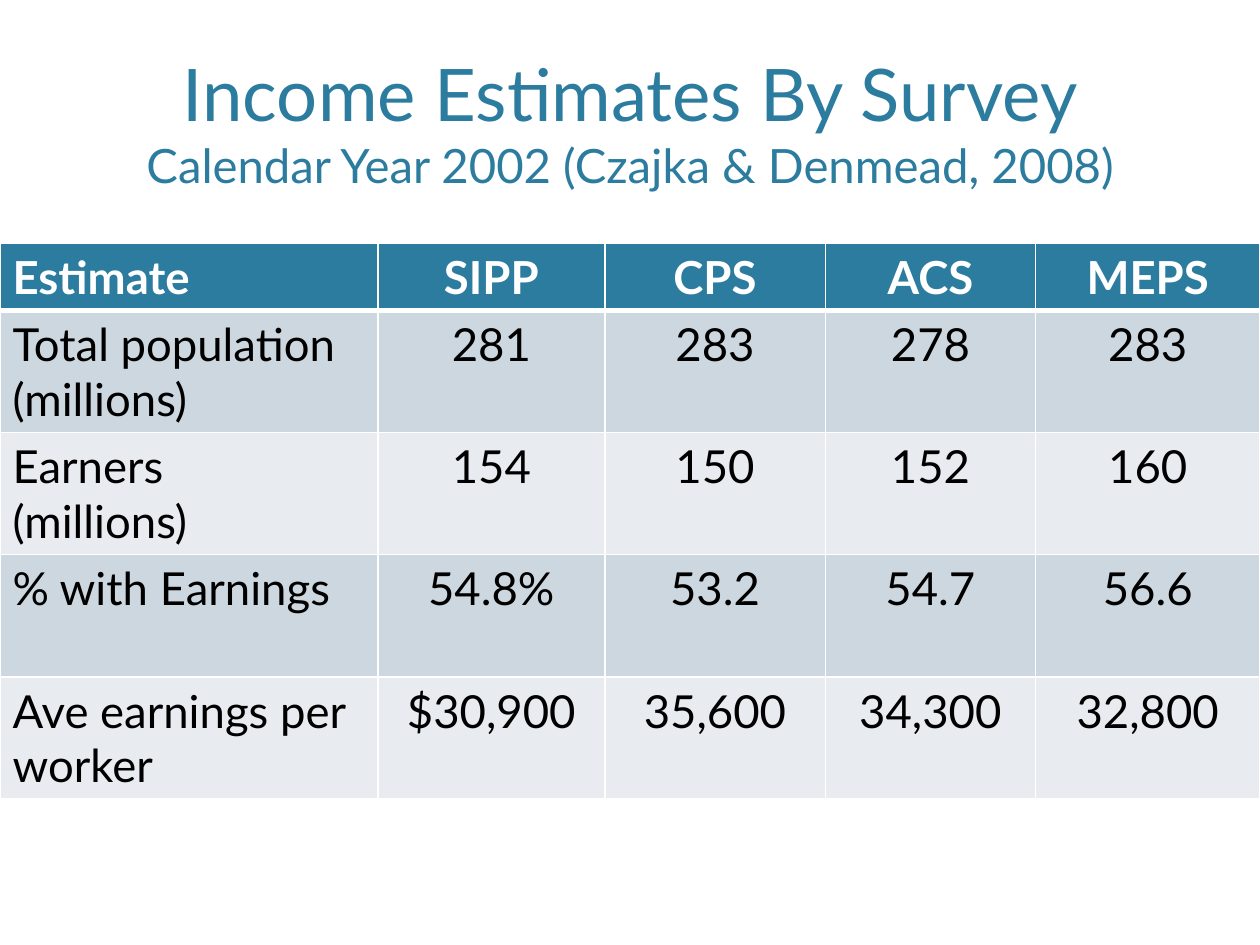
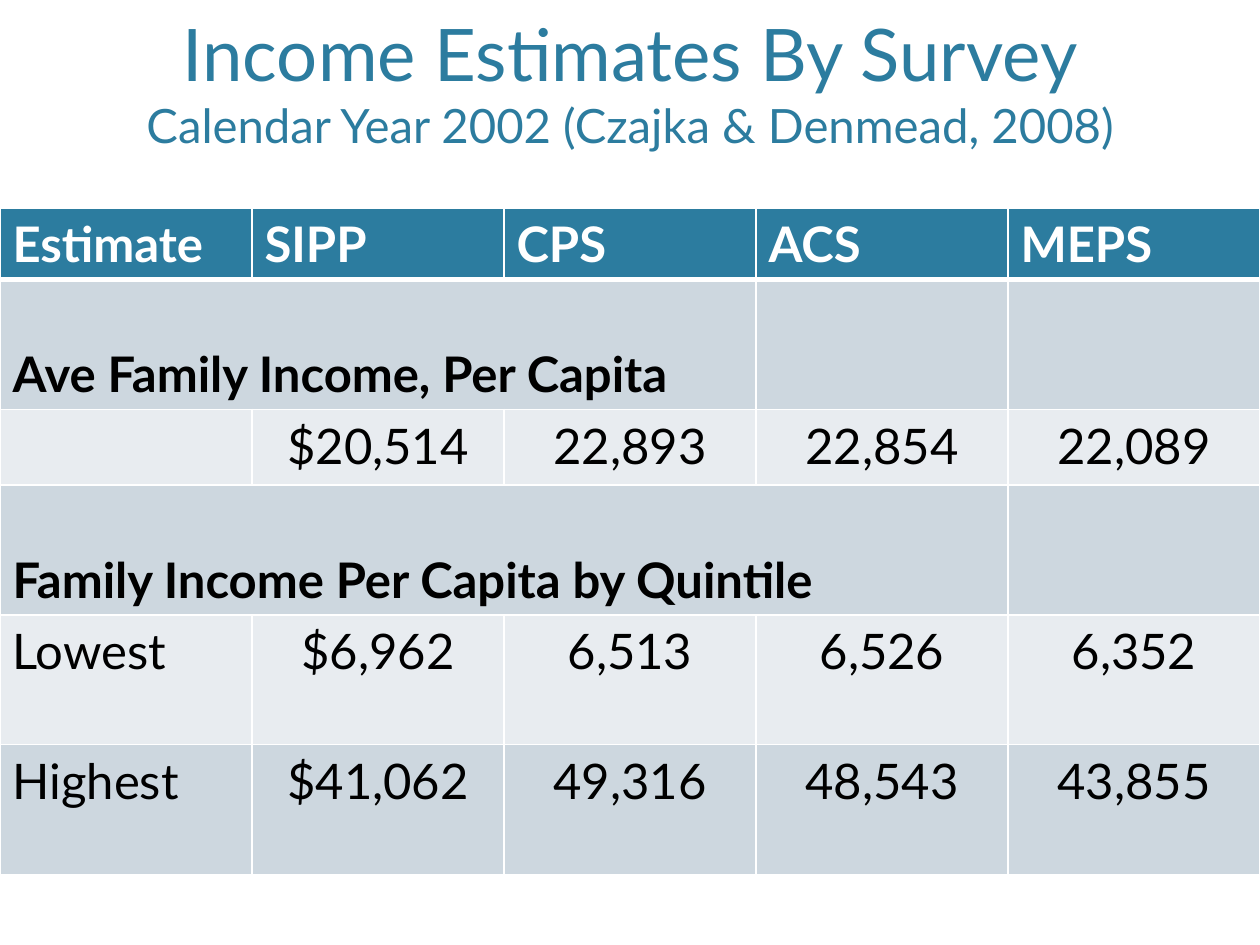
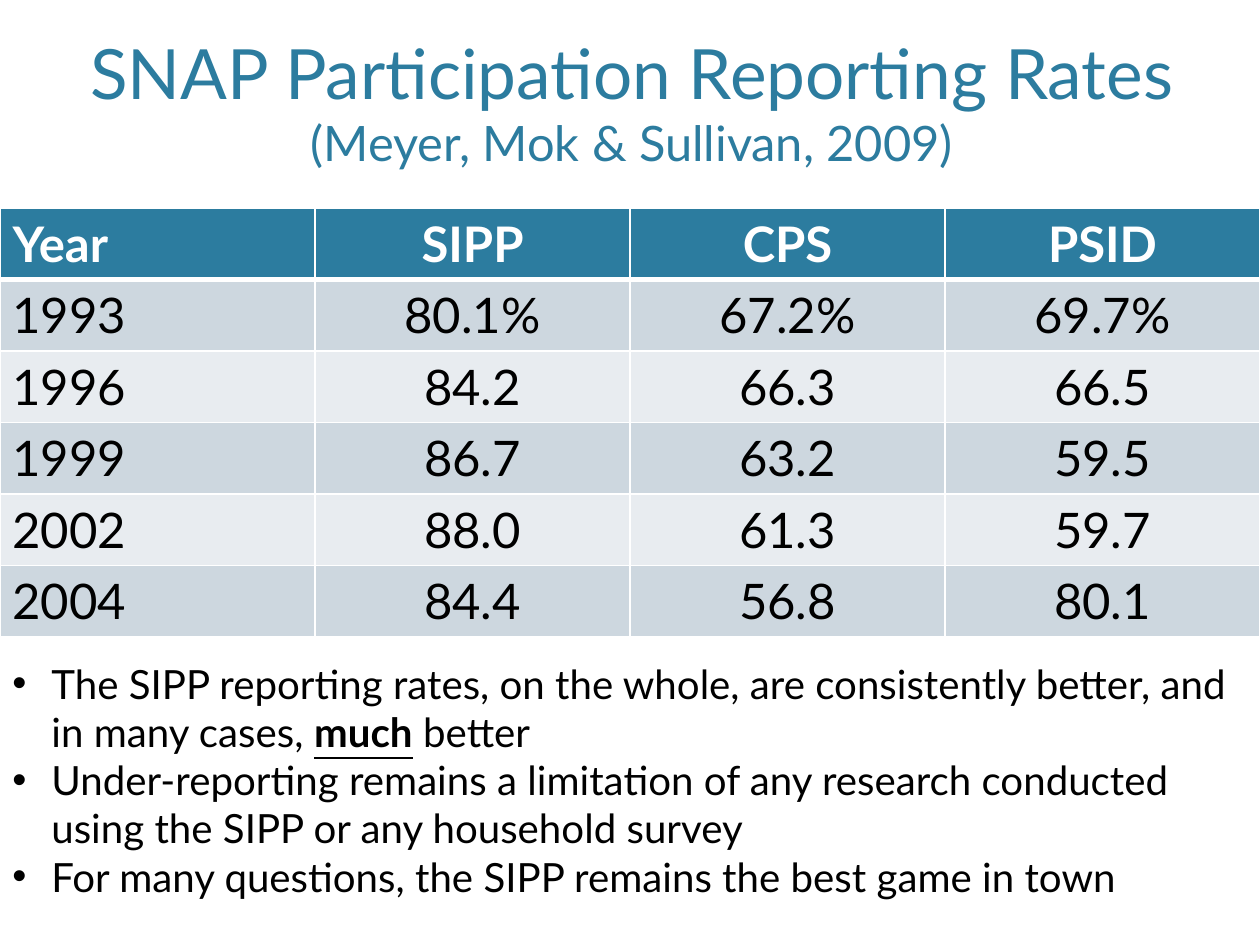
from lxml import etree
from pptx import Presentation
from pptx.dml.color import RGBColor
from pptx.enum import text
from pptx.oxml.ns import qn
from pptx.util import Inches, Pt

W, H = 10, 7.5
FONT = "Lato"
COLORS = {"teal": "2C7C9F", "white": "FFFFFF", "black": "000000",
          "dark_band": "CDD7DF", "light_band": "E8ECF0"}
LEFT, CENTER = text.PP_ALIGN.LEFT, text.PP_ALIGN.CENTER
TOP, BOTTOM = text.MSO_ANCHOR.TOP, text.MSO_ANCHOR.BOTTOM

INCOME_TITLE = [("Income Estimates By Survey", 41.4),
                ("Calendar Year 2002 (Czajka & Denmead, 2008)", 27)]
SURVEYS = ["SIPP", "CPS", "ACS", "MEPS"]

SLIDES = [
    {
        "title": INCOME_TITLE,
        "title_box": (0.6, 0.12, 8.8, 1.46),
        "table": {
            "top": 1.93, "size": 26, "header_align": CENTER,
            "cols": [3, 1.8, 1.75, 1.67, 1.78],
            "heights": [0.52] + [0.97] * 4,
            "rows": [
                ["Estimate", *SURVEYS],
                ["Total population\n(millions)", "281", "283", "278", "283"],
                ["Earners\n(millions)", "154", "150", "152", "160"],
                ["% with Earnings", "54.8%", "53.2", "54.7", "56.6"],
                ["Ave earnings per worker", "$30,900", "35,600", "34,300", "32,800"],
            ],
        },
    },
    {
        "title": INCOME_TITLE,
        "title_box": (0.6, 0.12, 8.8, 1.14),
        "table": {
            "top": 1.65, "size": 28, "header_align": LEFT,
            "cols": [W / 5] * 5,
            "heights": [0.57, 1.03, 0.6, 1.03, 1.03, 1.03],
            "spans": {1: 3, 3: 4},
            "rows": [
                ["Estimate", *SURVEYS],
                ["Ave Family Income, Per Capita", "", "", "", ""],
                ["", "$20,514", "22,893", "22,854", "22,089"],
                ["Family Income Per Capita by Quintile", "", "", "", ""],
                ["Lowest", "$6,962", "6,513", "6,526", "6,352"],
                ["Highest", "$41,062", "49,316", "48,543", "43,855"],
            ],
        },
    },
    {
        "title": [("SNAP Participation Reporting Rates", 39.6),
                  ("(Meyer, Mok & Sullivan, 2009)", 27.9)],
        "title_box": (0.19, 0.12, 9.65, 1.29),
        "table": {
            "top": 1.65, "size": 28, "header_align": CENTER,
            "cols": [W / 4] * 4,
            "heights": [3.4 / 6] * 6,
            "rows": [
                ["Year", "SIPP", "CPS", "PSID"],
                ["1993", "80.1%", "67.2%", "69.7%"],
                ["1996", "84.2", "66.3", "66.5"],
                ["1999", "86.7", "63.2", "59.5"],
                ["2002", "88.0", "61.3", "59.7"],
                ["2004", "84.4", "56.8", "80.1"],
            ],
        },
        "bullets_box": (0, 5.18, W, 2.04),
        "bullets": [
            [("The SIPP reporting rates, on the whole, are consistently better, "
              "and in many cases, ", {}),
             ("much", {"bold": True, "underline": True}),
             (" better", {})],
            [("Under-reporting remains a limitation of any research conducted "
              "using the SIPP or any household survey", {})],
            [("For many questions, the SIPP remains the best game in town", {})],
        ],
    },
]


def add_run(p, words, size, color, **fmt):
    r = p.add_run()
    r.text = words
    for name, value in {"name": FONT, "size": Pt(size), **fmt}.items():
        setattr(r.font, name, value)
    r.font.color.rgb = RGBColor.from_string(COLORS[color])


def add_box(s, box, anchor):
    tf = s.shapes.add_textbox(*map(Inches, box)).text_frame
    tf.word_wrap = True
    tf.vertical_anchor = anchor
    return tf


def add_title(s, lines, box):
    p = add_box(s, box, BOTTOM).paragraphs[0]
    p.alignment = CENTER
    for i, (words, size) in enumerate(lines):
        if i:
            p.add_line_break()
        add_run(p, words, size, "teal")


def set_borders(cell, widths):
    tc_pr = cell._tc.get_or_add_tcPr()
    for i, (side, width) in enumerate(widths.items()):
        ln = etree.Element(qn(f"a:ln{side}"), w=str(Pt(width)))
        fill = etree.SubElement(ln, qn("a:solidFill"))
        etree.SubElement(fill, qn("a:srgbClr"), val=COLORS["white"])
        tc_pr.insert(i, ln)


def fill_cell(cell, words, row, col, grouped, spec):
    header = row == 0
    band = "teal" if header else "dark_band" if row % 2 else "light_band"
    cell.fill.solid()
    cell.fill.fore_color.rgb = RGBColor.from_string(COLORS[band])
    set_borders(cell, {"L": 1, "R": 1, "T": 3 if row == 1 else 1, "B": 3 if header else 1})
    cell.vertical_anchor = BOTTOM if grouped else TOP
    if not words:
        return
    tf = cell.text_frame
    for i, line in enumerate(words.split("\n")):
        p = tf.add_paragraph() if i else tf.paragraphs[0]
        p.alignment = LEFT if col == 0 else spec["header_align"] if header else CENTER
        add_run(p, line, spec["size"], "white" if header else "black", bold=header or grouped)


def add_survey_table(s, spec):
    rows, cols, heights = spec["rows"], spec["cols"], spec["heights"]
    spans = spec.get("spans", {})
    tbl = s.shapes.add_table(len(rows), len(cols), 0, Inches(spec["top"]),
                             Inches(W), Inches(sum(heights))).table
    tbl.first_row = tbl.horz_banding = False
    for column, width in zip(tbl.columns, cols):
        column.width = Inches(width)
    for i, (values, height) in enumerate(zip(rows, heights)):
        tbl.rows[i].height = Inches(height)
        for j, words in enumerate(values):
            fill_cell(tbl.cell(i, j), words, i, j, i in spans, spec)
    for i, count in spans.items():
        tbl.cell(i, 0).merge(tbl.cell(i, count - 1))


def add_bullets(s, items, box):
    tf = add_box(s, box, TOP)
    for i, runs in enumerate(items):
        p = tf.add_paragraph() if i else tf.paragraphs[0]
        p_pr = p._p.get_or_add_pPr()
        p_pr.set("marL", str(Inches(0.31)))
        p_pr.set("indent", str(-Inches(0.31)))
        etree.SubElement(p_pr, qn("a:buFont"), typeface="Arial")
        etree.SubElement(p_pr, qn("a:buChar"), char="•")
        for words, fmt in runs:
            add_run(p, words, 23, "black", **fmt)


def main():
    prs = Presentation()
    prs.slide_width, prs.slide_height = Inches(W), Inches(H)
    for content in SLIDES:
        s = prs.slides.add_slide(prs.slide_layouts[6])
        add_title(s, content["title"], content["title_box"])
        add_survey_table(s, content["table"])
        if "bullets" in content:
            add_bullets(s, content["bullets"], content["bullets_box"])
    prs.save("out.pptx")


if __name__ == "__main__":
    main()
